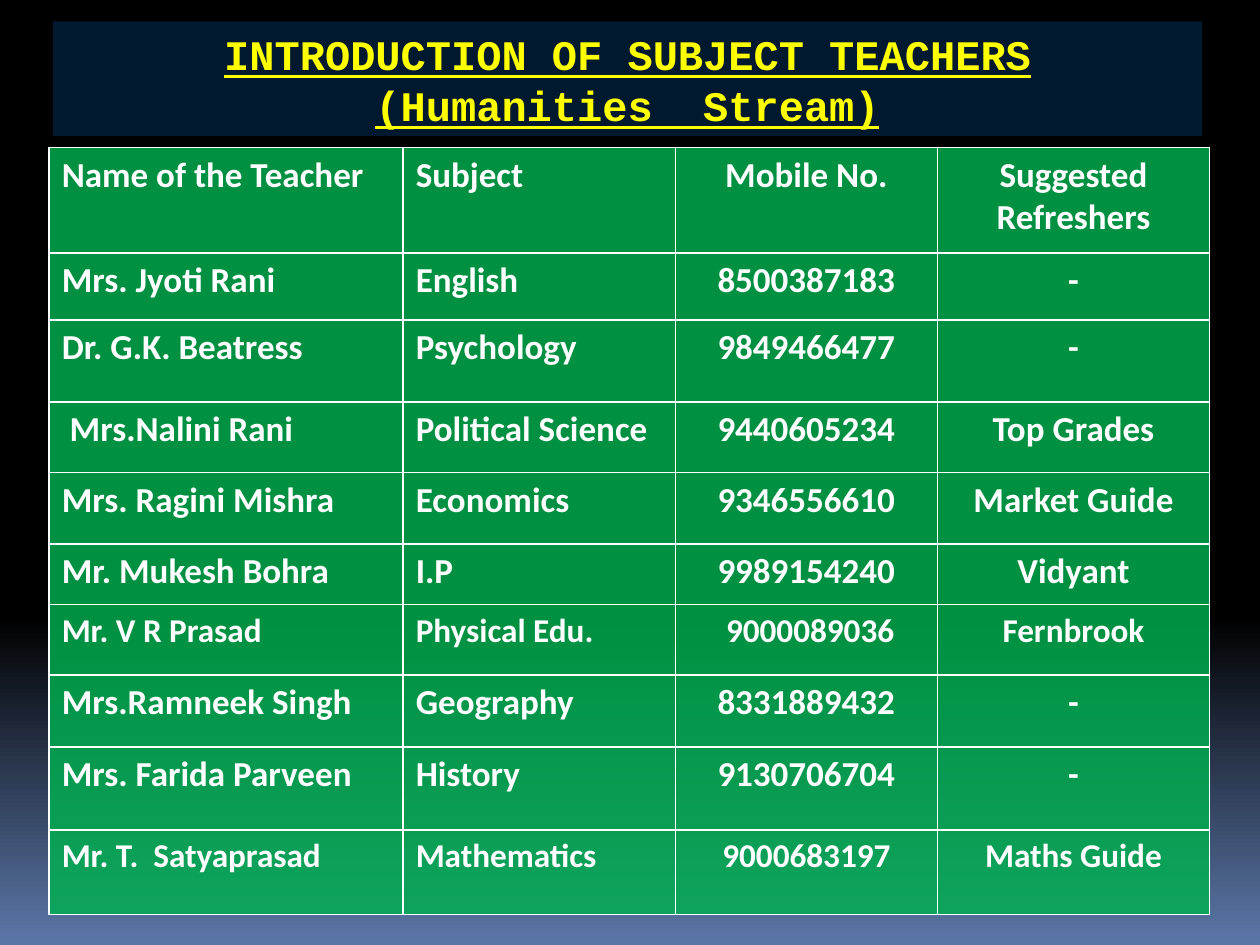
from dataclasses import dataclass

from lxml.etree import SubElement
from pptx import Presentation
from pptx.dml.color import RGBColor
from pptx.enum.shapes import MSO_SHAPE
from pptx.enum.text import MSO_ANCHOR, PP_ALIGN
from pptx.oxml import parse_xml
from pptx.oxml.ns import nsdecls, qn
from pptx.util import Inches, Pt


@dataclass(frozen=True)
class Theme:
    black: str = "000000"
    dusk: str = "5B77A8"
    navy: str = "00192F"
    yellow: str = "FFFF00"
    green: str = "00B050"
    white: str = "FFFFFF"
    title_font: str = "Courier New"
    body_font: str = "Calibri"
    title_size: float = 24
    title_leading: float = 29
    body_size: float = 20
    small_size: float = 19
    cell_opacity: int = 82
    border_width: float = 1


THEME = Theme()

TITLE_LINES = ["INTRODUCTION OF SUBJECT TEACHERS", "(Humanities  Stream)"]
COLUMN_WIDTHS = [2.81, 2.16, 2.08, 2.16]
COLUMN_ALIGNMENTS = [PP_ALIGN.LEFT, PP_ALIGN.LEFT, PP_ALIGN.CENTER, PP_ALIGN.CENTER]
# Row height, text size, cell texts
TEACHER_ROWS = [
    (0.84, THEME.body_size, ["Name of the Teacher", "Subject", "Mobile No.", "Suggested Refreshers"]),
    (0.53, THEME.body_size, ["Mrs. Jyoti Rani", "English", "8500387183", "-"]),
    (0.65, THEME.body_size, ["Dr. G.K. Beatress", "Psychology", "9849466477", "-"]),
    (0.56, THEME.body_size, [" Mrs.Nalini Rani", "Political Science", "9440605234", "Top Grades"]),
    (0.57, THEME.body_size, ["Mrs. Ragini Mishra", "Economics", "9346556610", "Market Guide"]),
    (0.48, THEME.body_size, ["Mr. Mukesh Bohra", "I.P", "9989154240", "Vidyant"]),
    (0.56, THEME.small_size, ["Mr. V R Prasad", "Physical Edu.", " 9000089036", "Fernbrook"]),
    (0.57, THEME.body_size, ["Mrs.Ramneek Singh", "Geography", "8331889432", "-"]),
    (0.66, THEME.body_size, ["Mrs. Farida Parveen", "History", "9130706704", "-"]),
    (0.67, THEME.small_size, ["Mr. T.  Satyaprasad", "Mathematics", "9000683197", "Maths Guide"]),
]


def rgb(value):
    return RGBColor.from_string(value)


def write_line(paragraph, text, alignment, color, **font_format):
    paragraph.alignment = alignment
    run = paragraph.add_run()
    run.text = text
    run.font.color.rgb = rgb(color)
    for name, value in font_format.items():
        setattr(run.font, name, value)


def paint_background(slide):
    fill = slide.background.fill
    fill.gradient()
    fill.gradient_angle = 270
    stops = [(0.65, THEME.black), (1, THEME.dusk)]
    for stop, (position, color) in zip(fill.gradient_stops, stops):
        stop.position = position
        stop.color.rgb = rgb(color)


def add_title(slide, left, top, width, height):
    banner = slide.shapes.add_shape(MSO_SHAPE.RECTANGLE, left, top, width, height)
    banner.shadow.inherit = False
    banner.fill.solid()
    banner.fill.fore_color.rgb = rgb(THEME.navy)
    banner.line.fill.background()
    frame = banner.text_frame
    frame.word_wrap = True
    frame.vertical_anchor = MSO_ANCHOR.MIDDLE
    for index, text in enumerate(TITLE_LINES):
        paragraph = frame.add_paragraph() if index else frame.paragraphs[0]
        paragraph.line_spacing = Pt(THEME.title_leading)
        write_line(paragraph, text, PP_ALIGN.CENTER, THEME.yellow, name=THEME.title_font,
                   size=Pt(THEME.title_size), bold=True, underline=True)


def style_cell(cell):
    """Give the cell a translucent fill and a border on all four sides."""
    cell.fill.solid()
    cell.fill.fore_color.rgb = rgb(THEME.green)
    properties = cell._tc.get_or_add_tcPr()
    color = properties.find(".//" + qn("a:srgbClr"))
    SubElement(color, qn("a:alpha"), val=str(THEME.cell_opacity * 1000))
    for index, side in enumerate(("lnL", "lnR", "lnT", "lnB")):
        border = parse_xml(
            f'<a:{side} {nsdecls("a")} w="{Pt(THEME.border_width)}"><a:solidFill>'
            f'<a:srgbClr val="{THEME.white}"/></a:solidFill></a:{side}>')
        properties.insert(index, border)


def add_teacher_table(slide, left, top, width, height):
    table = slide.shapes.add_table(
        len(TEACHER_ROWS), len(COLUMN_WIDTHS), left, top, width, height).table
    for column, column_width in zip(table.columns, COLUMN_WIDTHS):
        column.width = Inches(column_width)
    for row, (row_height, size, texts) in zip(table.rows, TEACHER_ROWS):
        row.height = Inches(row_height)
        for cell, text, alignment in zip(row.cells, texts, COLUMN_ALIGNMENTS):
            style_cell(cell)
            write_line(cell.text_frame.paragraphs[0], text, alignment, THEME.white,
                       name=THEME.body_font, size=Pt(size), bold=True)


def main():
    presentation = Presentation()
    presentation.slide_width = Inches(10)
    presentation.slide_height = Inches(7.5)
    slide = presentation.slides.add_slide(presentation.slide_layouts[6])
    paint_background(slide)
    add_title(slide, Inches(0.42), Inches(0.17), Inches(9.12), Inches(0.91))
    add_teacher_table(slide, Inches(0.39), Inches(1.17), Inches(9.22), Inches(6.09))
    presentation.save("out.pptx")


if __name__ == "__main__":
    main()
